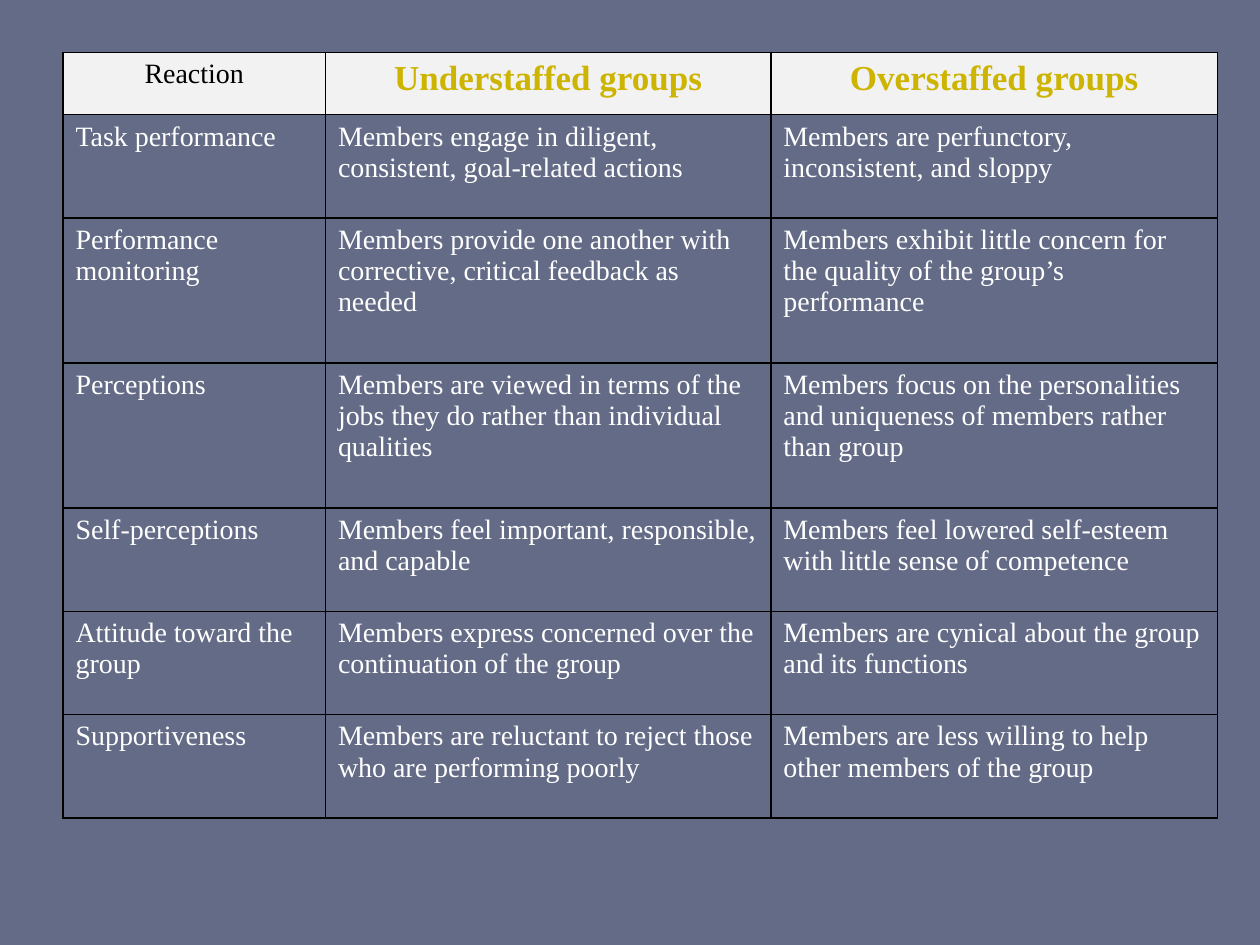
from lxml import etree
from pptx import Presentation
from pptx.dml.color import RGBColor
from pptx.enum.text import MSO_ANCHOR, PP_ALIGN
from pptx.oxml.ns import qn
from pptx.util import Pt

TOP = MSO_ANCHOR.TOP
LEFT, CENTER = PP_ALIGN.LEFT, PP_ALIGN.CENTER
BLANK_LAYOUT = 6
FONT = "Times New Roman"
COLORS = {
    "background": "646B86",
    "header": "F2F2F2",
    "accent": "CCB400",
    "border": "000000",
    "label": "000000",
    "body": "FFFFFF",
}
COLUMN_WIDTHS = [150, 254.5, 255.4]
HEADER_HEIGHT, TWO_LINES, THREE_LINES = 35.6, 59.1, 82.8
ROW_HEIGHTS = [HEADER_HEIGHT, TWO_LINES, THREE_LINES, THREE_LINES,
               TWO_LINES, TWO_LINES, TWO_LINES]
ROWS = [
    ("Reaction", "Understaffed groups", "Overstaffed groups"),
    ("Task performance",
     "Members engage in diligent, consistent, goal-related actions",
     "Members are perfunctory, inconsistent, and sloppy"),
    ("Performance monitoring",
     "Members provide one another with corrective, critical feedback as needed",
     "Members exhibit little concern for the quality of the group’s performance"),
    ("Perceptions",
     "Members are viewed in terms of the jobs they do rather than individual qualities",
     "Members focus on the personalities and uniqueness of members rather than group"),
    ("Self-perceptions",
     "Members feel important, responsible, and capable",
     "Members feel lowered self-esteem with little sense of competence"),
    ("Attitude toward the group",
     "Members express concerned over the continuation of the group",
     "Members are cynical about the group and its functions"),
    ("Supportiveness",
     "Members are reluctant to reject those who are performing poorly",
     "Members are less willing to help other members of the group"),
]


def color(name):
    return RGBColor.from_string(COLORS[name])


def add_borders(cell):
    properties = cell._tc.get_or_add_tcPr()
    for side in ("a:lnL", "a:lnR", "a:lnT", "a:lnB"):
        line = etree.SubElement(properties, qn(side), w=str(Pt(1)))
        fill = etree.SubElement(line, qn("a:solidFill"))
        etree.SubElement(fill, qn("a:srgbClr"), val=COLORS["border"])


def fill_cell(cell, text, size, color_name, bold, alignment):
    cell.vertical_anchor = TOP
    paragraph = cell.text_frame.paragraphs[0]
    paragraph.alignment = alignment
    run = paragraph.add_run()
    run.text = text
    run.font.name = FONT
    run.font.size = Pt(size)
    run.font.bold = bold
    run.font.color.rgb = color(color_name)


def add_comparison_table(slide, left, top, width, height):
    table = slide.shapes.add_table(
        len(ROWS), len(COLUMN_WIDTHS),
        Pt(left), Pt(top), Pt(width), Pt(height)).table
    table.first_row = table.horz_banding = False
    for column, column_width in zip(table.columns, COLUMN_WIDTHS):
        column.width = Pt(column_width)
    for row, row_height in zip(table.rows, ROW_HEIGHTS):
        row.height = Pt(row_height)

    for row_index, texts in enumerate(ROWS):
        for column_index, text in enumerate(texts):
            cell = table.cell(row_index, column_index)
            add_borders(cell)
            if row_index > 0:
                cell.fill.background()
                fill_cell(cell, text, 16, "body", False, LEFT)
                continue
            cell.fill.solid()
            cell.fill.fore_color.rgb = color("header")
            if column_index == 0:
                fill_cell(cell, text, 16, "label", False, CENTER)
            else:
                fill_cell(cell, text, 20, "accent", True, CENTER)


def main():
    presentation = Presentation()
    presentation.slide_width, presentation.slide_height = Pt(720), Pt(540)
    slide = presentation.slides.add_slide(presentation.slide_layouts[BLANK_LAYOUT])
    slide.background.fill.solid()
    slide.background.fill.fore_color.rgb = color("background")
    add_comparison_table(slide, 36, 30, sum(COLUMN_WIDTHS), sum(ROW_HEIGHTS))
    presentation.save("out.pptx")


if __name__ == "__main__":
    main()
